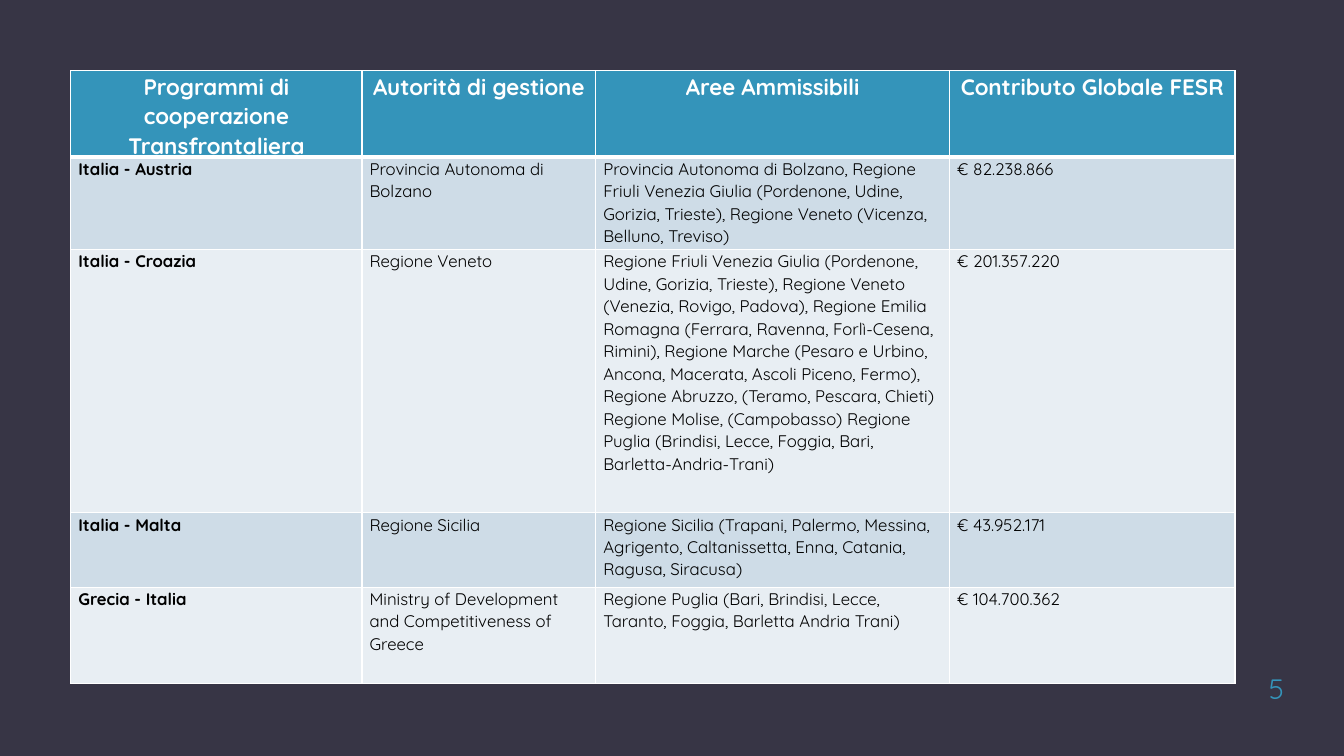
"""Slide listing the cross-border cooperation programmes and their ERDF funding."""
from dataclasses import dataclass

import lxml.etree
import pptx
import pptx.dml.color
import pptx.enum.text
import pptx.oxml
import pptx.oxml.ns
import pptx.util

Pt = pptx.util.Pt
Align = pptx.enum.text.PP_ALIGN
Anchor = pptx.enum.text.MSO_ANCHOR


@dataclass(frozen=True)
class Theme:
    font: str = "Quicksand"
    background: str = "373545"
    accent: str = "3494BA"
    light: str = "FFFFFF"
    dark: str = "000000"
    bands: tuple[str, str] = ("CEDCE7", "E8EEF3")
    header_size: float = 16
    body_size: float = 12
    number_size: float = 20
    line_spacing: float = 1.07
    thin: float = 1
    thick: float = 3


@dataclass(frozen=True)
class Programme:
    name: str
    authority: str
    areas: str
    contribution: str
    height: float

    def texts(self) -> tuple[str, ...]:
        return self.name, self.authority, self.areas, self.contribution


@dataclass(frozen=True)
class TextStyle:
    size: float
    color: str
    bold: bool = False
    align: Align = Align.LEFT
    line_spacing: float = 1.0


THEME = Theme()
COLUMN_WIDTHS = (208, 167, 252.8, 203.8)
HEADER = Programme("Programmi di cooperazione Transfrontaliera", "Autorità di gestione",
                   "Aree Ammissibili", "Contributo Globale FESR", 57.6)
PROGRAMMES = (
    Programme(
        "Italia - Austria", "Provincia Autonoma di Bolzano",
        "Provincia Autonoma di Bolzano, Regione Friuli Venezia Giulia (Pordenone, Udine, "
        "Gorizia, Trieste), Regione Veneto (Vicenza, Belluno, Treviso)",
        "€ 82.238.866", 66.2),
    Programme(
        "Italia - Croazia", "Regione Veneto",
        "Regione Friuli Venezia Giulia (Pordenone, Udine, Gorizia, Trieste), Regione Veneto "
        "(Venezia, Rovigo, Padova), Regione Emilia Romagna (Ferrara, Ravenna, Forlì-Cesena, "
        "Rimini), Regione Marche (Pesaro e Urbino, Ancona, Macerata, Ascoli Piceno, Fermo), "
        "Regione Abruzzo, (Teramo, Pescara, Chieti) Regione Molise, (Campobasso) Regione "
        "Puglia (Brindisi, Lecce, Foggia, Bari, Barletta-Andria-Trani)",
        "€ 201.357.220", 187.9),
    Programme(
        "Italia - Malta", "Regione Sicilia",
        "Regione Sicilia (Trapani, Palermo, Messina, Agrigento, Caltanissetta, Enna, Catania, "
        "Ragusa, Siracusa)",
        "€ 43.952.171", 53.2),
    Programme(
        "Grecia - Italia", "Ministry of Development and Competitiveness of Greece",
        "Regione Puglia (Bari, Brindisi, Lecce, Taranto, Foggia, Barletta Andria Trani)",
        "€ 104.700.362", 68.5),
)


def rgb(color: str) -> pptx.dml.color.RGBColor:
    return pptx.dml.color.RGBColor.from_string(color)


def apply_format(target: object, values: dict[str, object]) -> None:
    for attribute, value in values.items():
        setattr(target, attribute, value)


def write(frame: pptx.text.text.TextFrame, text: str, style: TextStyle) -> None:
    paragraph = frame.paragraphs[0]
    apply_format(paragraph, {"alignment": style.align, "line_spacing": style.line_spacing})
    run = paragraph.add_run()
    run.text = text
    apply_format(run.font, {"name": THEME.font, "size": Pt(style.size), "bold": style.bold})
    run.font.color.rgb = rgb(style.color)


def add_borders(cell: pptx.table._Cell, top: float, bottom: float) -> None:
    """Add the border lines, which must precede the fill in the cell properties."""
    properties = cell._tc.get_or_add_tcPr()
    widths = {"lnL": THEME.thin, "lnR": THEME.thin, "lnT": top, "lnB": bottom}
    for side, width in widths.items():
        line = lxml.etree.SubElement(properties, pptx.oxml.ns.qn(f"a:{side}"), w=str(Pt(width)))
        fill = lxml.etree.SubElement(line, pptx.oxml.ns.qn("a:solidFill"))
        lxml.etree.SubElement(fill, pptx.oxml.ns.qn("a:srgbClr"), val=THEME.light)


def add_programme_table(slide: pptx.slide.Slide) -> None:
    entries = (HEADER, *PROGRAMMES)
    table = slide.shapes.add_table(
        len(entries), len(COLUMN_WIDTHS), Pt(50.6), Pt(50.6),
        Pt(sum(COLUMN_WIDTHS)), Pt(sum(entry.height for entry in entries))).table
    table.horz_banding = False
    for column, width in zip(table.columns, COLUMN_WIDTHS):
        column.width = Pt(width)

    for row_index, entry in enumerate(entries):
        table.rows[row_index].height = Pt(entry.height)
        is_header = row_index == 0
        for column_index, text in enumerate(entry.texts()):
            cell = table.cell(row_index, column_index)
            add_borders(cell, THEME.thick if row_index == 1 else THEME.thin,
                        THEME.thick if is_header else THEME.thin)
            cell.fill.solid()
            cell.fill.fore_color.rgb = rgb(
                THEME.accent if is_header else THEME.bands[(row_index - 1) % 2])
            apply_format(cell, {"margin_left": Pt(5.4), "margin_right": Pt(5.4),
                                "margin_top": Pt(0), "margin_bottom": Pt(0)})
            write(cell.text_frame, text, TextStyle(
                size=THEME.header_size if is_header else THEME.body_size,
                color=THEME.light if is_header else THEME.dark,
                bold=is_header or column_index == 0,
                align=Align.CENTER if is_header else Align.LEFT,
                line_spacing=THEME.line_spacing))


def add_page_number(slide: pptx.slide.Slide, number: str) -> None:
    frame = slide.shapes.add_textbox(Pt(841), Pt(465.8), Pt(83.5), Pt(38.9)).text_frame
    apply_format(frame, {"word_wrap": True, "vertical_anchor": Anchor.BOTTOM,
                         "margin_left": Pt(7.2), "margin_right": Pt(7.2),
                         "margin_top": Pt(3.6), "margin_bottom": Pt(0.7)})
    write(frame, number, TextStyle(THEME.number_size, THEME.accent, align=Align.RIGHT))


def main() -> None:
    presentation = pptx.Presentation()
    apply_format(presentation, {"slide_width": Pt(960), "slide_height": Pt(540)})
    blank_layout = presentation.slide_layouts[6]
    slide = presentation.slides.add_slide(blank_layout)
    slide.background.fill.solid()
    slide.background.fill.fore_color.rgb = rgb(THEME.background)
    add_page_number(slide, "5")
    add_programme_table(slide)
    presentation.save("out.pptx")


if __name__ == "__main__":
    main()
